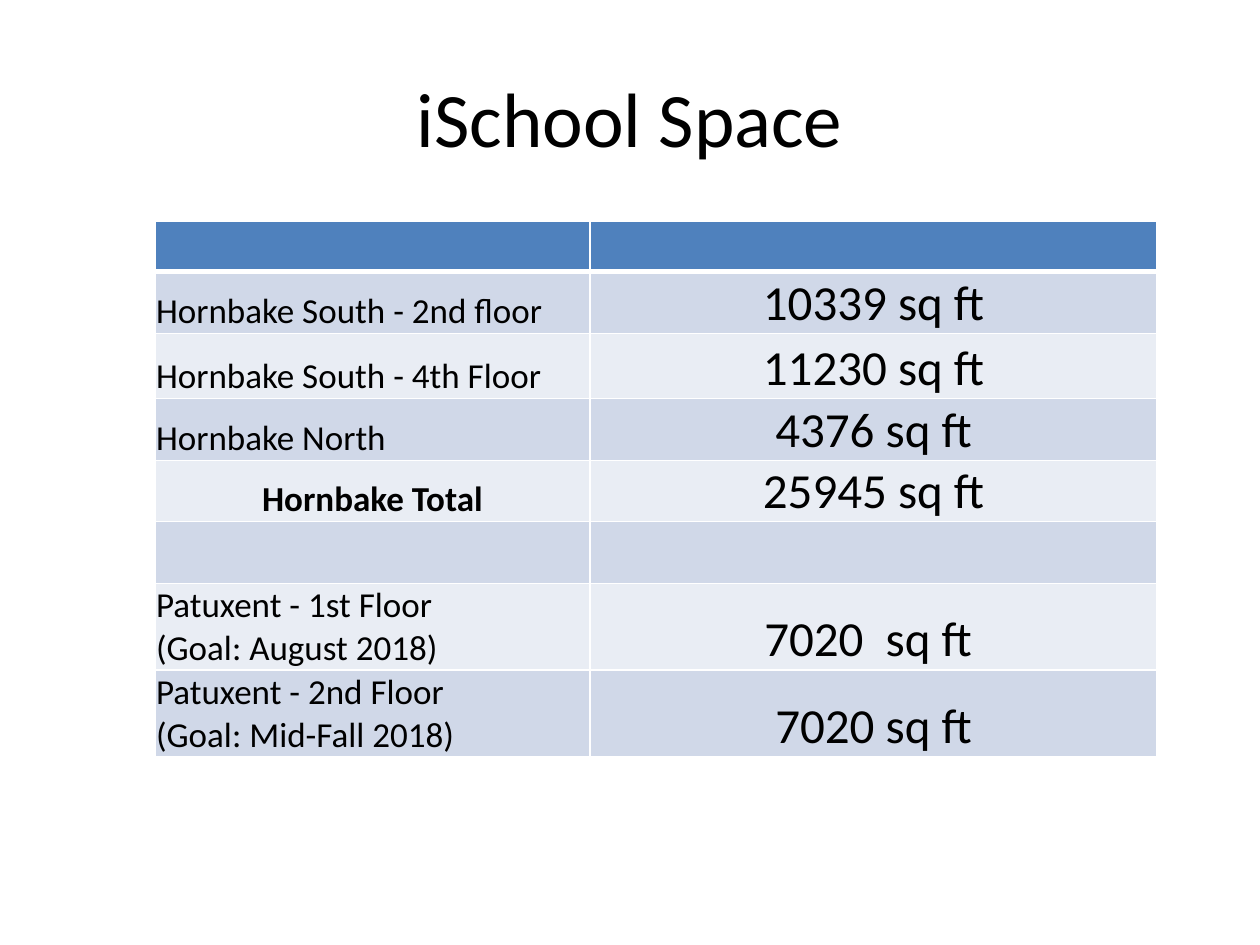
"""Build the iSchool Space slide: a title above a table of floor areas."""
from lxml.etree import SubElement
from pptx import Presentation
from pptx.dml.color import RGBColor
from pptx.enum.text import MSO_ANCHOR as Anchor, PP_ALIGN as Align
from pptx.oxml.ns import qn
from pptx.util import Pt


def px(length):
    return round(length * 914400 / 126)


def style(paragraph, size, align, bold=False, color="000000"):
    paragraph.alignment = align
    paragraph.font.name = "Calibri"
    paragraph.font.size = Pt(size)
    paragraph.font.bold = bold
    paragraph.font.color.rgb = RGBColor.from_string(color)


HEADER, DARK, LIGHT, BORDER = "4F81BD", "D0D8E8", "E9EDF4", "FFFFFF"
SPACES = [
    ("", "", 50),
    ("Hornbake South - 2nd floor", "10339 sq ft", 62),
    ("Hornbake South - 4th Floor", "11230 sq ft", 65),
    ("Hornbake North", "4376 sq ft", 62),
    ("Hornbake Total", "25945 sq ft", 61),
    ("", "", 62),
    ("Patuxent - 1st Floor\n(Goal: August 2018)", "7020  sq ft ", 87),
    ("Patuxent - 2nd Floor\n(Goal: Mid-Fall 2018)", "7020 sq ft", 87),
]

deck = Presentation()
deck.slide_width, deck.slide_height = px(1260), px(945)
slide = deck.slides.add_slide(deck.slide_layouts[6])

title = slide.shapes.add_textbox(px(63), px(38), px(1134), px(157)).text_frame
title.word_wrap = True
title.vertical_anchor = Anchor.MIDDLE
title.text = "iSchool Space"
style(title.paragraphs[0], 44, Align.CENTER)

total_height = sum(height for _, _, height in SPACES)
areas = slide.shapes.add_table(
    len(SPACES), 2, px(155), px(221), px(1002), px(total_height)).table
areas.columns[0].width, areas.columns[1].width = px(435), px(567)

for row, (place, area, height) in enumerate(SPACES):
    areas.rows[row].height = px(height)
    band = HEADER if row == 0 else DARK if row % 2 else LIGHT
    is_total = place.endswith("Total")
    place_align = Align.CENTER if is_total else Align.LEFT
    for column, (text, size, align, bold) in enumerate([
            (place, 20, place_align, is_total), (area, 28, Align.CENTER, False)]):
        cell = areas.cell(row, column)
        if text:
            cell.text = text
            cell.vertical_anchor = Anchor.BOTTOM
            cell.margin_left = cell.margin_right = cell.margin_top = px(1)
            cell.margin_bottom = 0
            for paragraph in cell.text_frame.paragraphs:
                style(paragraph, size, align, bold)
        properties = cell._tc.get_or_add_tcPr()
        for side in ("lnL", "lnR", "lnT", "lnB"):
            thick = (row, side) in [(0, "lnB"), (1, "lnT")]
            line = SubElement(properties, qn(f"a:{side}"), w=str(Pt(3 if thick else 1)))
            paint = SubElement(line, qn("a:solidFill"))
            SubElement(paint, qn("a:srgbClr"), val=BORDER)
        cell.fill.solid()
        cell.fill.fore_color.rgb = RGBColor.from_string(band)

deck.save("out.pptx")
